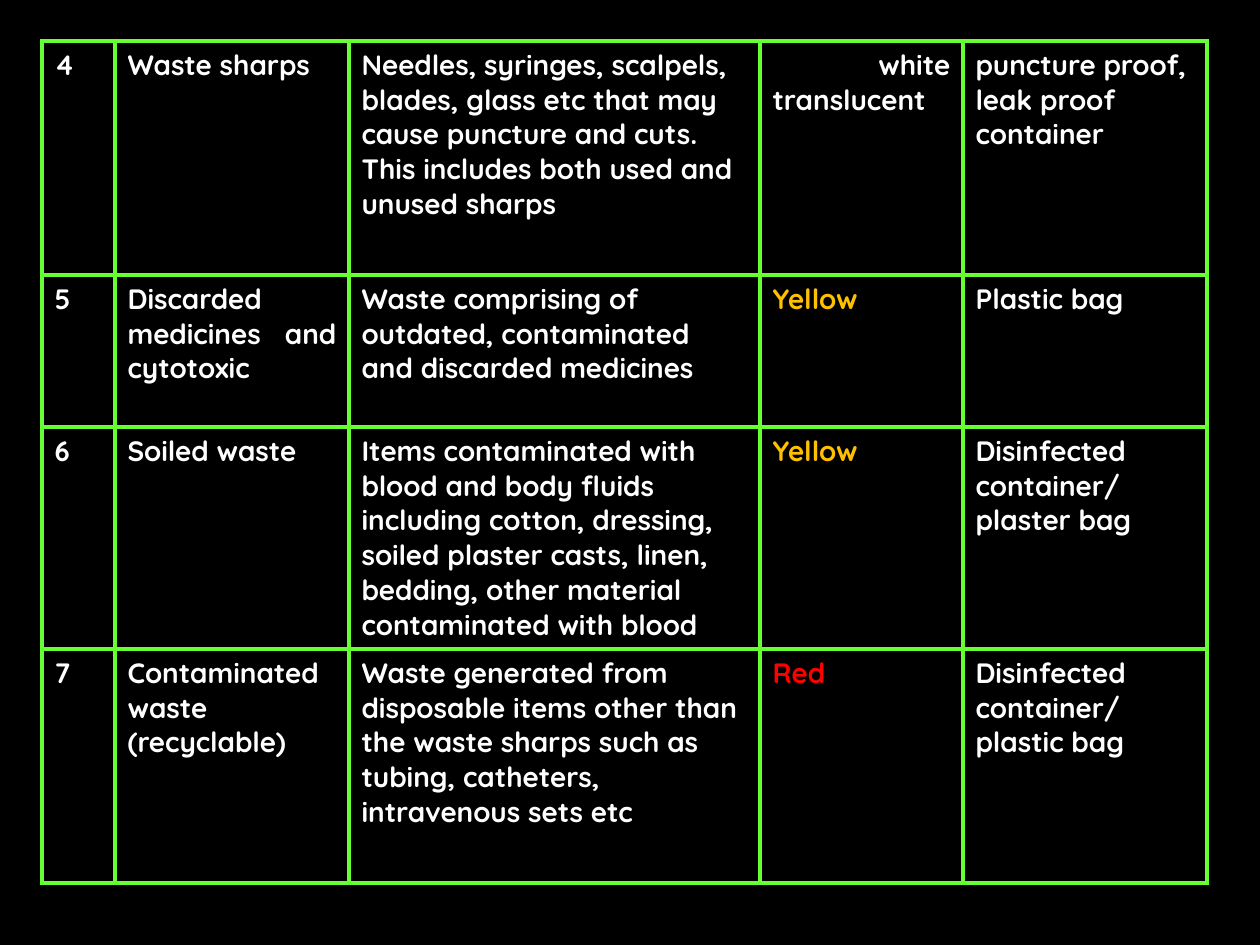
import pptx
import pptx.dml.color
import pptx.enum.text
import pptx.oxml
import pptx.oxml.ns
import pptx.util

PX = 914400 // 126
COLORS = {"black": "000000", "white": "FFFFFF", "green": "66FF33",
          "yellow": "FFC000", "red": "FF0000"}
COL_WIDTHS = [73, 234, 411, 203, 244]
ROW_HEIGHTS = [234, 152, 222, 234]
DESCRIPTION_COL, COLOR_COL = 2, 3

# Number, category, description, bag colour, container
ROWS = [
    ["4", "Waste sharps",
     "Needles, syringes, scalpels, blades, glass etc that may cause puncture "
     "and cuts. This includes both used and unused sharps",
     " white translucent", "puncture proof, leak proof container"],
    ["5", "Discarded medicines and cytotoxic",
     "Waste comprising of outdated, contaminated and discarded medicines",
     "Yellow", "Plastic bag"],
    ["6", "Soiled waste",
     "Items contaminated with blood and body fluids including cotton, dressing, "
     "soiled plaster casts, linen, bedding, other material contaminated with blood",
     "Yellow", "Disinfected container/ plaster bag"],
    ["7", "Contaminated waste (recyclable)",
     "Waste generated from disposable items other than the waste sharps such as "
     "tubing, catheters, intravenous sets etc",
     "Red", "Disinfected container/ plastic bag"],
]


def rgb(name):
    return pptx.dml.color.RGBColor.from_string(COLORS[name])


def add_borders(cell, color, width):
    tcPr = cell._tc.get_or_add_tcPr()
    for side in "LRTB":
        tcPr.append(pptx.oxml.parse_xml(
            f'<a:ln{side} {pptx.oxml.ns.nsdecls("a")} w="{width}">'
            f'<a:solidFill><a:srgbClr val="{COLORS[color]}"/></a:solidFill>'
            f'</a:ln{side}>'))


prs = pptx.Presentation()
prs.slide_width = pptx.util.Inches(10)
prs.slide_height = pptx.util.Inches(7.5)
s = prs.slides.add_slide(prs.slide_layouts[6])

# Background
s.background.fill.solid()
s.background.fill.fore_color.rgb = rgb("black")

# Table grid
table = s.shapes.add_table(
    len(ROW_HEIGHTS), len(COL_WIDTHS), 42 * PX, 41 * PX,
    sum(COL_WIDTHS) * PX, sum(ROW_HEIGHTS) * PX).table
table.first_row = False
table.horz_banding = False
for col, width in zip(table.columns, COL_WIDTHS):
    col.width = width * PX
for row, height in zip(table.rows, ROW_HEIGHTS):
    row.height = height * PX

# Cells
for i, texts in enumerate(ROWS):
    for j, text in enumerate(texts):
        cell = table.cell(i, j)
        add_borders(cell, "green", pptx.util.Pt(2.25))
        cell.fill.background()
        p = cell.text_frame.paragraphs[0]
        p.text = text
        left = j == DESCRIPTION_COL or (i == 0 and j == len(texts) - 1)
        p.alignment = (pptx.enum.text.PP_ALIGN.LEFT if left
                       else pptx.enum.text.PP_ALIGN.JUSTIFY)
        p.font.name = "Quicksand"
        p.font.size = pptx.util.Pt(16)
        p.font.bold = True
        named = j == COLOR_COL and text.lower() in COLORS
        p.font.color.rgb = rgb(text.lower() if named else "white")

prs.save("out.pptx")
